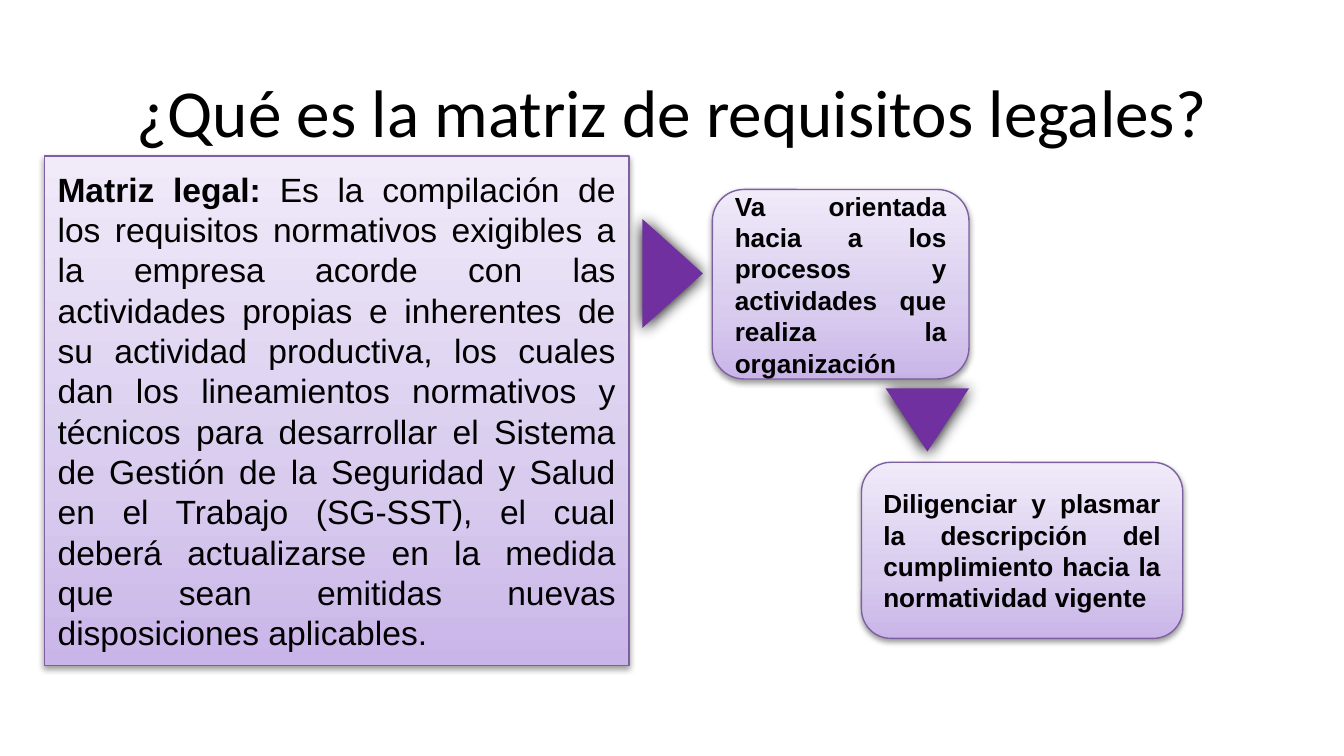
from lxml import etree
from pptx import Presentation
from pptx.dml.color import RGBColor
from pptx.enum.shapes import MSO_SHAPE
from pptx.enum.text import MSO_ANCHOR, PP_ALIGN
from pptx.oxml.ns import qn
from pptx.util import Inches, Pt

RECT = MSO_SHAPE.RECTANGLE
ROUNDED = MSO_SHAPE.ROUNDED_RECTANGLE
TRIANGLE = MSO_SHAPE.ISOSCELES_TRIANGLE
MIDDLE = MSO_ANCHOR.MIDDLE
CENTER = PP_ALIGN.CENTER
JUSTIFY = PP_ALIGN.JUSTIFY

COLORS = {
    "text": "000000",
    "shadow": "000000",
    "border": "7D60A0",
    "arrow": "7030A0",
    "deep": "C9B5E8",
    "mid": "D8CBEE",
    "pale": "F0EAF9",
}
GRADIENT = [(0, "deep"), (35, "mid"), (100, "pale")]


def add_shadow(shape, opacity, blur, distance):
    """Cast a soft shadow straight down."""
    shape.shadow.inherit = False
    effects = shape._element.spPr.find(qn("a:effectLst"))
    outer = etree.SubElement(
        effects, qn("a:outerShdw"), blurRad=str(Pt(blur)),
        dist=str(Pt(distance)), dir="5400000", rotWithShape="0")
    color = etree.SubElement(outer, qn("a:srgbClr"), val=COLORS["shadow"])
    etree.SubElement(color, qn("a:alpha"), val=str(opacity * 1000))


def add_run(paragraph, text, font_name, size, bold=False):
    run = paragraph.add_run()
    run.text = text
    run.font.name = font_name
    run.font.size = Pt(size)
    run.font.bold = bold
    run.font.color.rgb = RGBColor.from_string(COLORS["text"])


# 16:9 slide
prs = Presentation()
prs.slide_width = Inches(10)
prs.slide_height = Inches(10 * 9 / 16)
slide = prs.slides.add_slide(prs.slide_layouts[6])

# Purple cards: kind, position, text size, runs as (text, bold)
cards = [
    (RECT, (0.33, 1.16, 4.35, 3.79), 18, [
        ("Matriz legal: ", True),
        ("Es la compilación de los requisitos normativos exigibles a la "
         "empresa acorde con las actividades propias e inherentes de su "
         "actividad productiva, los cuales dan los lineamientos normativos y "
         "técnicos para desarrollar el Sistema de Gestión de la Seguridad y "
         "Salud en el Trabajo (SG-SST), el cual deberá actualizarse en la "
         "medida que sean emitidas nuevas disposiciones aplicables.", False),
    ]),
    (ROUNDED, (5.3, 1.41, 1.91, 1.41), 14, [
        ("Va orientada hacia a los procesos y actividades que realiza la "
         "organización", True),
    ]),
    (ROUNDED, (6.41, 3.44, 2.39, 1.31), 14, [
        ("Diligenciar y plasmar la descripción del cumplimiento hacia la "
         "normatividad vigente", True),
    ]),
]
for kind, place, size, runs in cards:
    card = slide.shapes.add_shape(kind, *[Inches(n) for n in place])
    card.fill.gradient()
    card.fill.gradient_angle = 90
    stops = card._element.spPr.find(qn("a:gradFill")).find(qn("a:gsLst"))
    for old_stop in list(stops):
        stops.remove(old_stop)
    for position, color in GRADIENT:
        stop = etree.SubElement(stops, qn("a:gs"), pos=str(position * 1000))
        etree.SubElement(stop, qn("a:srgbClr"), val=COLORS[color])
    card.line.color.rgb = RGBColor.from_string(COLORS["border"])
    card.line.width = Pt(0.75)
    add_shadow(card, 38, 3.1, 1.6)
    card.text_frame.word_wrap = True
    card.text_frame.vertical_anchor = MIDDLE
    paragraph = card.text_frame.paragraphs[0]
    paragraph.alignment = JUSTIFY
    for text, bold in runs:
        add_run(paragraph, text, "Arial", size, bold)

# Title
title = slide.shapes.add_textbox(Inches(0), Inches(0.48), Inches(10), Inches(0.69))
title.text_frame.word_wrap = True
title.text_frame.vertical_anchor = MIDDLE
heading = title.text_frame.paragraphs[0]
heading.alignment = CENTER
add_run(heading, "¿Qué es la matriz de requisitos legales?", "Calibri", 36)

# Triangles leading from card to card
for place, rotation in [((4.6, 1.81, 0.81, 0.45), 90),
                        ((6.59, 2.89, 0.62, 0.47), 180)]:
    arrow = slide.shapes.add_shape(TRIANGLE, *[Inches(n) for n in place])
    arrow.rotation = rotation
    arrow.fill.solid()
    arrow.fill.fore_color.rgb = RGBColor.from_string(COLORS["arrow"])
    arrow.line.fill.background()
    add_shadow(arrow, 100, 8.5, 1)

prs.save("out.pptx")
